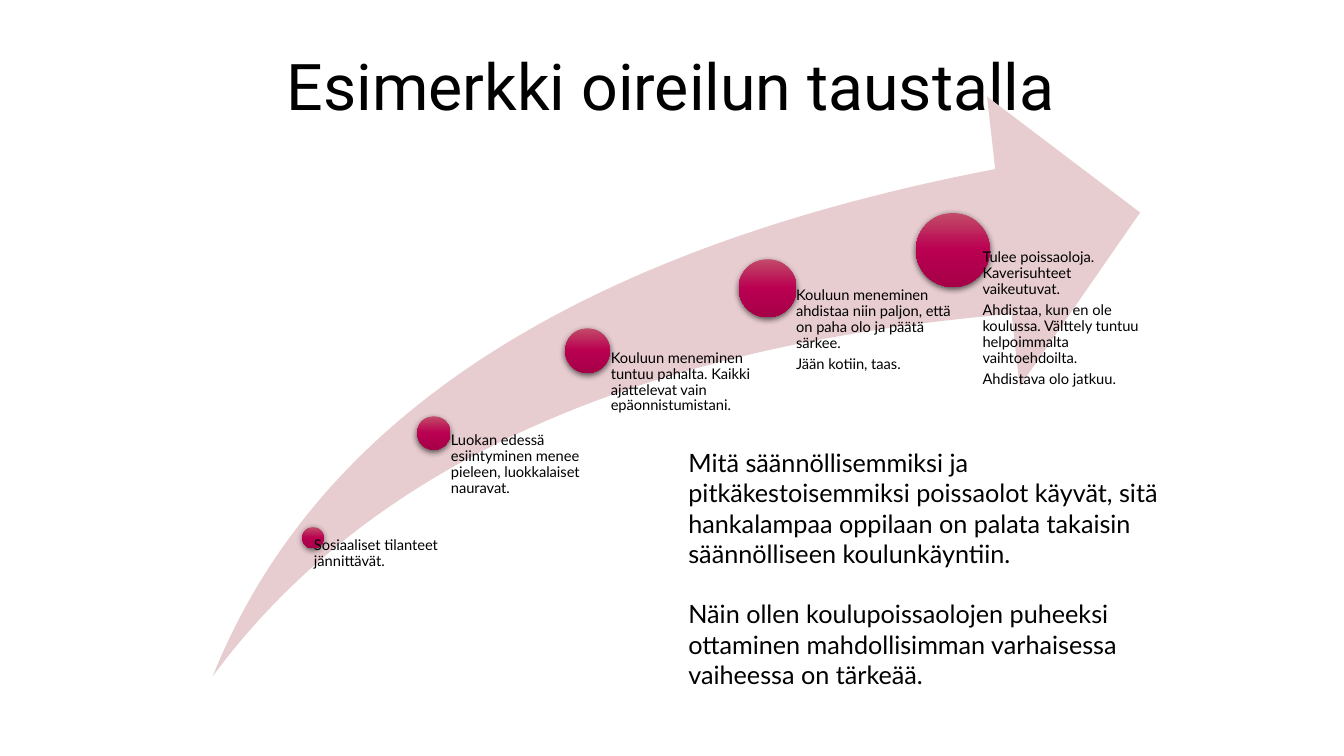
from copy import deepcopy
from dataclasses import dataclass

from lxml.etree import SubElement
from pptx import Presentation
from pptx.dml.color import RGBColor
from pptx.enum.shapes import MSO_SHAPE
from pptx.enum.text import MSO_ANCHOR, MSO_AUTO_SIZE, PP_ALIGN
from pptx.oxml.ns import qn
from pptx.slide import Slide
from pptx.text.text import TextFrame
from pptx.util import Pt

BLACK = RGBColor(0x00, 0x00, 0x00)
PINK = RGBColor(0xE7, 0xCC, 0xD0)
SHADES = {
    0: RGBColor(0xC2, 0x4B, 0x69),
    0.5: RGBColor(0xBA, 0x00, 0x51),
    1: RGBColor(0xA5, 0x00, 0x48),
}
FLOOR = 483  # lower edge shared by the arrow and all step texts


@dataclass
class Step:
    left: float
    top: float
    size: float
    text_left: float
    text_width: float
    lines: list[str]


STEPS = [
    Step(216, 376.6, 15.2, 216.7, 100.8, ["Sosiaaliset tilanteet jännittävät."]),
    Step(298, 297.4, 23.8, 310.2, 110.2, [
        "Luokan edessä esiintyminen menee pieleen, luokkalaiset nauravat."]),
    Step(403.8, 234.6, 31.8, 420.4, 127.4, [
        "Kouluun meneminen tuntuu pahalta. Kaikki ajattelevat vain epäonnistumistani."]),
    Step(527.6, 185.2, 41.4, 548, 132.5, [
        "Kouluun meneminen ahdistaa niin paljon, että on paha olo ja päätä särkee.",
        "Jään kotiin, taas."]),
    Step(654.2, 152.2, 52.8, 675.4, 143.3, [
        "Tulee poissaoloja. Kaverisuhteet vaikeutuvat.",
        "Ahdistaa, kun en ole koulussa. Välttely tuntuu helpoimmalta vaihtoehdoilta.",
        "Ahdistava olo jatkuu."]),
]
CLAIMS = [
    "Mitä säännöllisemmiksi ja pitkäkestoisemmiksi poissaolot käyvät, sitä "
    "hankalampaa oppilaan on palata takaisin säännölliseen koulunkäyntiin.",
    "Näin ollen koulupoissaolojen puheeksi ottaminen mahdollisimman varhaisessa "
    "vaiheessa on tärkeää.",
]


def write(frame: TextFrame, lines: list[str], size: float, font: str = "Lato",
          spacing: float = 1, after: float = 0) -> None:
    frame.word_wrap = True
    for i, line in enumerate(lines):
        para = frame.add_paragraph() if i else frame.paragraphs[0]
        para.line_spacing = spacing
        para.space_before = Pt(0)
        para.space_after = Pt(after)
        run = para.add_run()
        run.text = line
        run.font.size = Pt(size)
        run.font.name = font
        run.font.color.rgb = BLACK


def add_title(slide: Slide) -> None:
    title = slide.shapes.title
    title.left, title.top, title.width, title.height = Pt(34.5), Pt(11.5), Pt(889), Pt(104.5)
    title.text_frame.vertical_anchor = MSO_ANCHOR.MIDDLE
    write(title.text_frame, ["Esimerkki oireilun taustalla"], 46, "Roboto", 0.9)
    title.text_frame.paragraphs[0].alignment = PP_ALIGN.CENTER


def add_arrow(slide: Slide) -> None:
    top = 69
    arrow = slide.shapes.add_shape(
        MSO_SHAPE.SWOOSH_ARROW, Pt(152), Pt(top), Pt(662.4), Pt(FLOOR - top))
    arrow.adjustments[0] = arrow.adjustments[1] = 0.25
    arrow.fill.solid()
    arrow.fill.fore_color.rgb = PINK
    arrow.line.fill.background()
    arrow.shadow.inherit = False


def add_ball(slide: Slide, step: Step) -> None:
    ball = slide.shapes.add_shape(
        MSO_SHAPE.OVAL, Pt(step.left), Pt(step.top), Pt(step.size), Pt(step.size))
    ball.line.fill.background()
    ball.fill.gradient()
    ball.fill.gradient_angle = 270
    props = ball.element.spPr
    stops = props.find(".//" + qn("a:gsLst"))
    stops.insert(1, deepcopy(stops[0]))
    for stop, (place, shade) in zip(ball.fill.gradient_stops, SHADES.items()):
        stop.position = place
        stop.color.rgb = shade

    ball.shadow.inherit = False
    shadow = SubElement(props.find(qn("a:effectLst")), qn("a:outerShdw"),
                        blurRad=str(Pt(4.5)), dist=str(Pt(1.5)), dir="5400000",
                        algn="ctr", rotWithShape="0")
    tint = SubElement(shadow, qn("a:srgbClr"), val=str(BLACK))
    SubElement(tint, qn("a:alpha"), val="63000")


def add_step(slide: Slide, step: Step) -> None:
    add_ball(slide, step)
    half = step.size / 2
    top = step.top + half
    box = slide.shapes.add_textbox(
        Pt(step.text_left), Pt(top), Pt(step.text_width), Pt(FLOOR - top))
    frame = box.text_frame
    frame.margin_left = Pt(half)
    frame.margin_top = frame.margin_right = frame.margin_bottom = 0
    write(frame, step.lines, 10.5, spacing=0.9, after=3.7)


def add_claims(slide: Slide) -> None:
    box = slide.shapes.add_textbox(Pt(484.6), Pt(316), Pt(365.8), Pt(181.4))
    write(box.text_frame, CLAIMS, 18)
    box.text_frame.auto_size = MSO_AUTO_SIZE.SHAPE_TO_FIT_TEXT
    box.text_frame.paragraphs[0].space_after = Pt(21.6)


def main() -> None:
    deck = Presentation()
    deck.slide_width, deck.slide_height = Pt(960), Pt(540)
    slide = deck.slides.add_slide(deck.slide_layouts[5])
    add_title(slide)
    add_arrow(slide)
    for step in STEPS:
        add_step(slide, step)
    add_claims(slide)
    deck.save("out.pptx")


if __name__ == "__main__":
    main()
